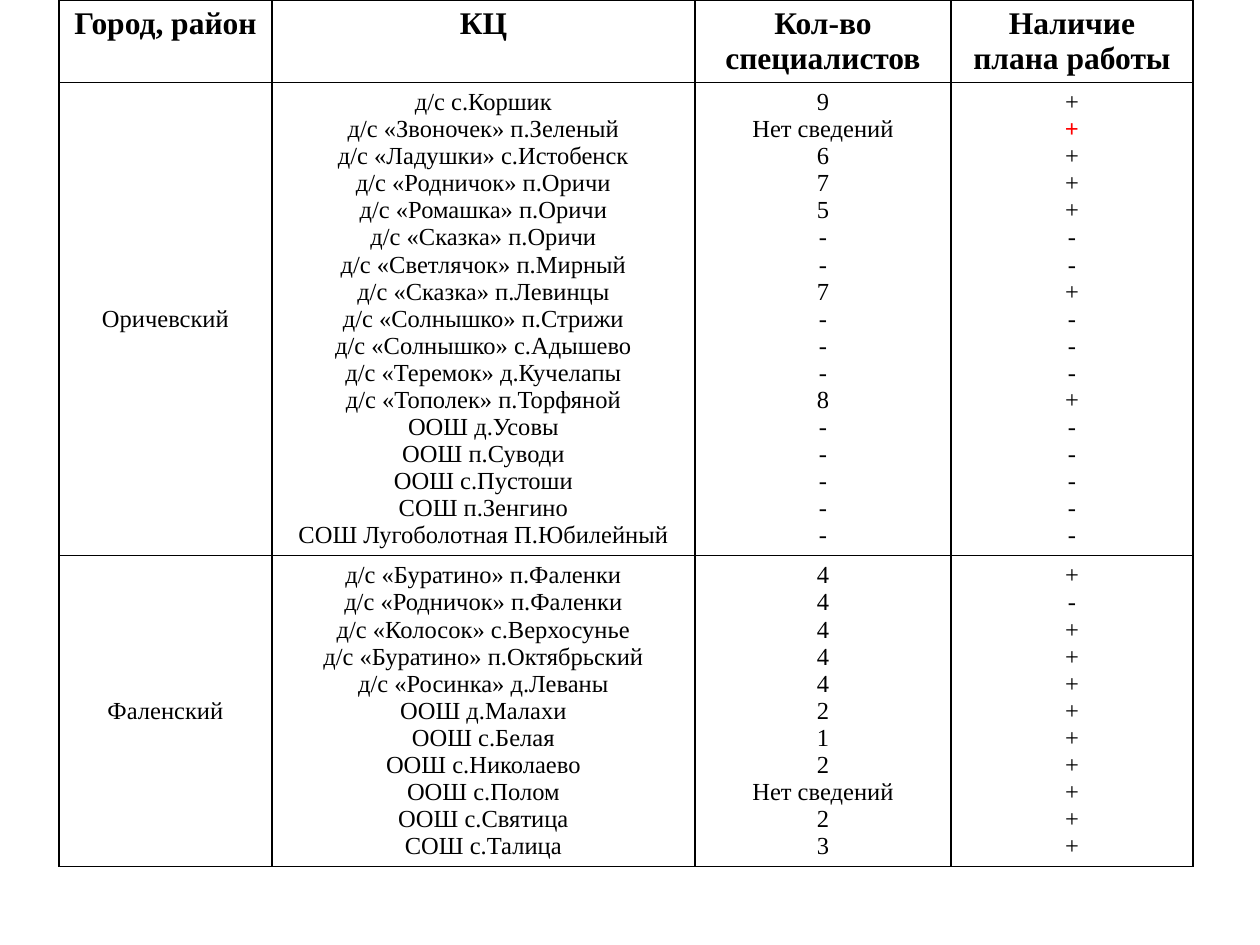
from dataclasses import dataclass

from lxml.etree import SubElement
from pptx import Presentation
from pptx.dml.color import RGBColor
from pptx.enum.text import MSO_ANCHOR, PP_ALIGN
from pptx.oxml.ns import qn
from pptx.util import Cm, Pt


@dataclass(frozen=True)
class Theme:
    """Colours, font and sizes of the slide."""
    font: str = "Times New Roman"
    text: str = "000000"
    accent: str = "FF0000"
    paper: str = "FFFFFF"
    head_size: int = 18
    body_size: int = 14
    border: int = 1


THEME = Theme()
HEADERS = ["Город, район", "КЦ", "Кол-во специалистов", "Наличие плана работы"]
COL_WIDTHS = [4.29, 8.53, 5.16, 4.88]
ROW_HEIGHTS = [1.65, 9.53, 6.27]
NO_DATA = "Нет сведений"
HIGHLIGHT = "д/с «Звоночек» п.Зеленый"
DISTRICTS = {
    "Оричевский": [
        ("д/с с.Коршик", "9", "+"),
        (HIGHLIGHT, NO_DATA, "+"),
        ("д/с «Ладушки» с.Истобенск", "6", "+"),
        ("д/с «Родничок» п.Оричи", "7", "+"),
        ("д/с «Ромашка» п.Оричи", "5", "+"),
        ("д/с «Сказка» п.Оричи", "-", "-"),
        ("д/с «Светлячок» п.Мирный", "-", "-"),
        ("д/с «Сказка» п.Левинцы", "7", "+"),
        ("д/с «Солнышко» п.Стрижи", "-", "-"),
        ("д/с «Солнышко» с.Адышево", "-", "-"),
        ("д/с «Теремок» д.Кучелапы", "-", "-"),
        ("д/с «Тополек» п.Торфяной", "8", "+"),
        ("ООШ д.Усовы", "-", "-"),
        ("ООШ п.Суводи", "-", "-"),
        ("ООШ с.Пустоши", "-", "-"),
        ("СОШ п.Зенгино", "-", "-"),
        ("СОШ Лугоболотная П.Юбилейный", "-", "-"),
    ],
    "Фаленский": [
        ("д/с «Буратино» п.Фаленки", "4", "+"),
        ("д/с «Родничок» п.Фаленки", "4", "-"),
        ("д/с «Колосок» с.Верхосунье", "4", "+"),
        ("д/с «Буратино» п.Октябрьский", "4", "+"),
        ("д/с «Росинка» д.Леваны", "4", "+"),
        ("ООШ д.Малахи", "2", "+"),
        ("ООШ с.Белая", "1", "+"),
        ("ООШ с.Николаево", "2", "+"),
        ("ООШ с.Полом", NO_DATA, "+"),
        ("ООШ с.Святица", "2", "+"),
        ("СОШ с.Талица", "3", "+"),
    ],
}


def set_borders(cell):
    """Draw a solid line on all four sides of a cell."""
    props = cell._tc.get_or_add_tcPr()
    for i, side in enumerate(("a:lnL", "a:lnR", "a:lnT", "a:lnB")):
        line = SubElement(props, qn(side), w=str(Pt(THEME.border)))
        fill = SubElement(line, qn("a:solidFill"))
        SubElement(fill, qn("a:srgbClr"), val=THEME.text)
        props.remove(line)
        props.insert(i, line)


def fill_cell(cell, lines, size, bold=False, anchor=MSO_ANCHOR.MIDDLE):
    """Write centred lines into a cell and style it."""
    cell.fill.solid()
    cell.fill.fore_color.rgb = RGBColor.from_string(THEME.paper)
    cell.vertical_anchor = anchor
    set_borders(cell)
    tf = cell.text_frame
    tf.text = "\n".join(lines)
    for p in tf.paragraphs:
        p.alignment = PP_ALIGN.CENTER
        p.font.name = THEME.font
        p.font.size = Pt(size)
        p.font.bold = bold
        p.font.color.rgb = RGBColor.from_string(THEME.text)


def add_centres_table(s, left, top):
    """Place the table of consulting centres, one row per district."""
    frame = s.shapes.add_table(len(ROW_HEIGHTS), len(COL_WIDTHS), Cm(left), Cm(top),
                               Cm(sum(COL_WIDTHS)), Cm(sum(ROW_HEIGHTS)))
    table = frame.table
    for column, width in zip(table.columns, COL_WIDTHS):
        column.width = Cm(width)
    for row, height in zip(table.rows, ROW_HEIGHTS):
        row.height = Cm(height)
    for c, header in enumerate(HEADERS):
        fill_cell(table.cell(0, c), [header], THEME.head_size, True, MSO_ANCHOR.TOP)
    for r, (district, centres) in enumerate(DISTRICTS.items(), 1):
        for c, lines in enumerate([[district], *zip(*centres)]):
            fill_cell(table.cell(r, c), lines, THEME.body_size)
        for p, centre in zip(table.cell(r, 3).text_frame.paragraphs, centres):
            if centre[0] == HIGHLIGHT:
                p.font.bold = True
                p.font.color.rgb = RGBColor.from_string(THEME.accent)


def main():
    """Build and save the presentation."""
    prs = Presentation()
    prs.slide_width, prs.slide_height = Cm(25.4), Cm(19.05)
    s = prs.slides.add_slide(prs.slide_layouts[6])
    add_centres_table(s, 1.19, 0)
    prs.save("out.pptx")


if __name__ == "__main__":
    main()
